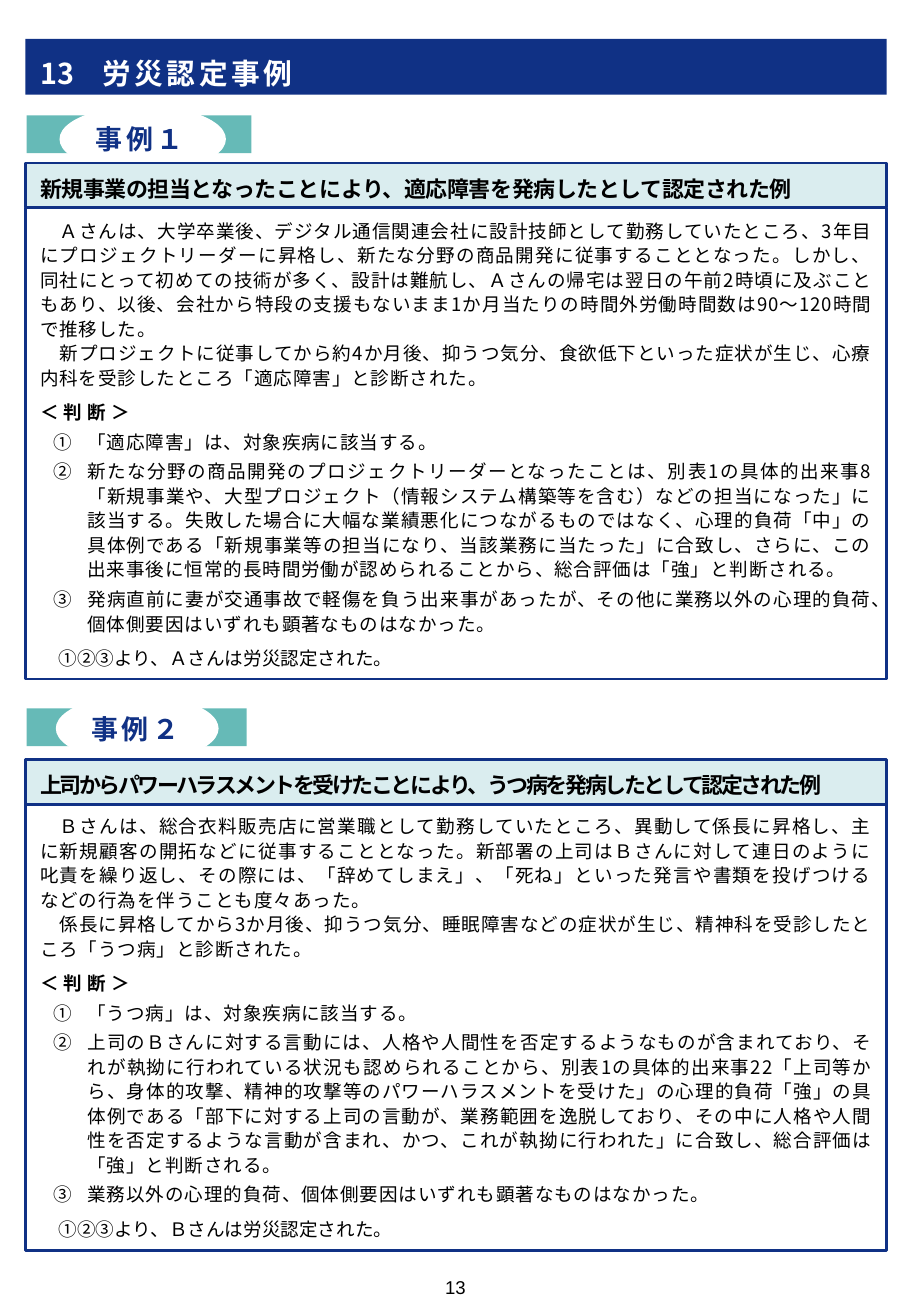
import pptx
import pptx.util
import pptx.dml.color
import pptx.enum.text
import pptx.enum.shapes
import lxml.etree

Inches = pptx.util.Inches
Align = pptx.enum.text.PP_ALIGN
Anchor = pptx.enum.text.MSO_ANCHOR
Kind = pptx.enum.shapes.MSO_SHAPE
NAVY, TEAL, PALE, WHITE, BLACK = "103185", "66BAB7", "DAEDEF", "FFFFFF", "000000"
GOTHIC = "Noto Sans CJK JP"

frame = {
    "margin_left": Inches(0.12), "margin_right": Inches(0.12),
    "margin_top": Inches(0.08), "margin_bottom": Inches(0.05),
    "word_wrap": True, "vertical_anchor": Anchor.TOP,
    "auto_size": pptx.enum.text.MSO_AUTO_SIZE.NONE,
}
badge = {"word_wrap": False, "vertical_anchor": Anchor.MIDDLE}


def style(shape, box, fill, line=0, form=frame):
    for side, size in zip(("left", "top", "width", "height"), box):
        setattr(shape, side, Inches(size))
    shape.fill.solid()
    shape.fill.fore_color.rgb = pptx.dml.color.RGBColor.from_string(fill)
    if line:
        shape.line.color.rgb = pptx.dml.color.RGBColor.from_string(NAVY)
        shape.line.width = pptx.util.Pt(line)
    else:
        shape.line.fill.background()
    for key, value in form.items():
        setattr(shape.text_frame, key, value)
    return shape


def write(par, text, size, color=BLACK, bold=False, track=0, name=GOTHIC, **form):
    for key, value in form.items():
        setattr(par, key, value)
    run = par.add_run()
    run.text = text
    look = {"size": pptx.util.Pt(size), "bold": bold, "name": name}
    for key, value in look.items():
        setattr(run.font, key, value)
    run.font.color.rgb = pptx.dml.color.RGBColor.from_string(color)
    props = run.font._element
    props.set("spc", str(round(track * 100)))
    props.set("lang", "ja-JP")
    lxml.etree.SubElement(props, pptx.oxml.ns.qn("a:ea"), typeface=name)


deck = pptx.Presentation()
deck.slide_width, deck.slide_height = Inches(7.5), Inches(10.83)
slide = deck.slides.add_slide(deck.slide_layouts[3])
title, *bodies = slide.placeholders

style(title, (0.21, 0.32, 7.09, 0.46), NAVY)
head = title.text_frame.paragraphs[0]
write(head, "13　", 17, WHITE, True, alignment=Align.LEFT, line_spacing=1.2)
write(head, "労災認定事例", 17, WHITE, True, 2)

cases = [
    {
        "label": "事例１",
        "band": (0.22, 0.95, 1.85, 0.31),
        "oval": (0.49, 0.87, 1.37, 0.55),
        "bar": (0.21, 1.34, 7.09, 0.37),
        "box": (0.21, 1.71, 7.09, 3.88),
        "line": 1.5,
        "track": -0.2,
        "topic": "新規事業の担当となったことにより、適応障害を発病したとして認定された例",
        "story": [
            "　Ａさんは、大学卒業後、デジタル通信関連会社に設計技師として勤務していたところ、3年目にプロジェクトリーダーに昇格し、新たな分野の商品開発に従事することとなった。しかし、同社にとって初めての技術が多く、設計は難航し、Ａさんの帰宅は翌日の午前2時頃に及ぶこともあり、以後、会社から特段の支援もないまま1か月当たりの時間外労働時間数は90～120時間で推移した。",
            "　新プロジェクトに従事してから約4か月後、抑うつ気分、食欲低下といった症状が生じ、心療内科を受診したところ「適応障害」と診断された。",
        ],
        "points": [
            "「適応障害」は、対象疾病に該当する。",
            "新たな分野の商品開発のプロジェクトリーダーとなったことは、別表1の具体的出来事8「新規事業や、大型プロジェクト（情報システム構築等を含む）などの担当になった」に該当する。失敗した場合に大幅な業績悪化につながるものではなく、心理的負荷「中」の具体例である「新規事業等の担当になり、当該業務に当たった」に合致し、さらに、この出来事後に恒常的長時間労働が認められることから、総合評価は「強」と判断される。",
            "発病直前に妻が交通事故で軽傷を負う出来事があったが、その他に業務以外の心理的負荷、個体側要因はいずれも顕著なものはなかった。",
        ],
        "end": "　①②③より、Ａさんは労災認定された。",
    },
    {
        "label": "事例２",
        "band": (0.22, 5.83, 1.81, 0.31),
        "oval": (0.46, 5.72, 1.34, 0.55),
        "bar": (0.21, 6.25, 7.09, 0.37),
        "box": (0.21, 6.61, 7.09, 3.68),
        "line": 2,
        "track": -1.4,
        "topic": "上司からパワーハラスメントを受けたことにより、うつ病を発病したとして認定された例",
        "story": [
            "　Ｂさんは、総合衣料販売店に営業職として勤務していたところ、異動して係長に昇格し、主に新規顧客の開拓などに従事することとなった。新部署の上司はＢさんに対して連日のように叱責を繰り返し、その際には、「辞めてしまえ」、「死ね」といった発言や書類を投げつけるなどの行為を伴うことも度々あった。",
            "　係長に昇格してから3か月後、抑うつ気分、睡眠障害などの症状が生じ、精神科を受診したところ「うつ病」と診断された。",
        ],
        "points": [
            "「うつ病」は、対象疾病に該当する。",
            "上司のＢさんに対する言動には、人格や人間性を否定するようなものが含まれており、それが執拗に行われている状況も認められることから、別表1の具体的出来事22「上司等から、身体的攻撃、精神的攻撃等のパワーハラスメントを受けた」の心理的負荷「強」の具体例である「部下に対する上司の言動が、業務範囲を逸脱しており、その中に人格や人間性を否定するような言動が含まれ、かつ、これが執拗に行われた」に合致し、総合評価は「強」と判断される。",
            "業務以外の心理的負荷、個体側要因はいずれも顕著なものはなかった。",
        ],
        "end": "　①②③より、Ｂさんは労災認定された。",
    },
]

for case, body in zip(cases, bodies):
    parts = {}
    for part, kind, fill, line, form in (
        ("band", Kind.RECTANGLE, TEAL, 0, frame),
        ("oval", Kind.OVAL, WHITE, 0, badge),
        ("bar", Kind.RECTANGLE, PALE, 1.5, frame),
    ):
        shape = slide.shapes.add_shape(kind, 0, 0, 0, 0)
        shape.shadow.inherit = False
        parts[part] = style(shape, case[part], fill, line, form)
    write(parts["oval"].text_frame.paragraphs[0], case["label"], 16, NAVY, True, 2,
          alignment=Align.LEFT)
    write(parts["bar"].text_frame.paragraphs[0], case["topic"], 13, BLACK, True,
          case["track"], alignment=Align.LEFT, line_spacing=1.1)

    style(body, case["box"], WHITE, case["line"])
    rows = [(text, 0, False, 0.5, False) for text in case["story"]]
    rows.append(("＜判断＞", 6, True, 3, False))
    rows += [(text, 3, False, 0.5, True) for text in case["points"]]
    rows.append((case["end"], 6, False, 0, False))
    for i, (text, gap, bold, track, item) in enumerate(rows):
        par = body.text_frame.add_paragraph() if i else body.text_frame.paragraphs[0]
        write(par, text, 11, BLACK, bold, track, alignment=Align.JUSTIFY,
              line_spacing=1.1, space_before=pptx.util.Pt(gap))
        props = par._p.get_or_add_pPr()
        props.set("marL", str(Inches(0.39) if item else 0))
        props.set("indent", str(Inches(-0.28) if item else 0))
        if item:
            lxml.etree.SubElement(props, pptx.oxml.ns.qn("a:buFont"), typeface=GOTHIC)
            lxml.etree.SubElement(props, pptx.oxml.ns.qn("a:buAutoNum"), type="circleNumDbPlain")
        else:
            lxml.etree.SubElement(props, pptx.oxml.ns.qn("a:buNone"))

page = slide.shapes.add_textbox(Inches(2.96), Inches(10.45), Inches(1.58), Inches(0.38))
page.text_frame.word_wrap = True
write(page.text_frame.paragraphs[0], "13", 11, name="Arial", alignment=Align.CENTER)

deck.save("out.pptx")
